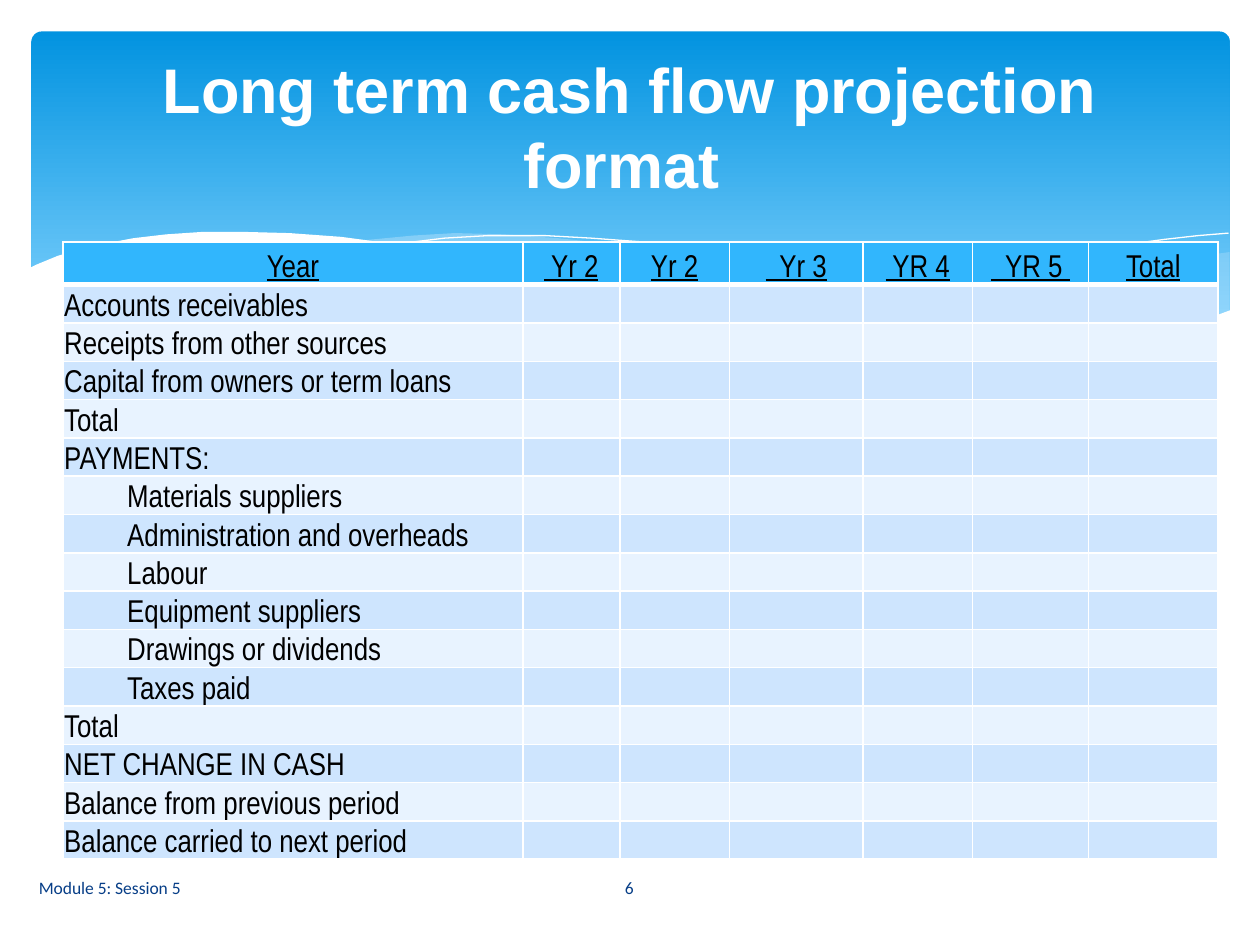
from lxml import etree
from pptx import Presentation
from pptx.dml.color import RGBColor
from pptx.enum.shapes import MSO_SHAPE
from pptx.enum.text import MSO_ANCHOR, PP_ALIGN
from pptx.oxml.ns import qn
from pptx.util import Inches, Pt

ROUNDED_RECTANGLE = MSO_SHAPE.ROUNDED_RECTANGLE
MIDDLE, BOTTOM = MSO_ANCHOR.MIDDLE, MSO_ANCHOR.BOTTOM
LEFT, CENTER = PP_ALIGN.LEFT, PP_ALIGN.CENTER

WHITE = RGBColor(0xFF, 0xFF, 0xFF)
BLACK = RGBColor(0x00, 0x00, 0x00)
NAVY = RGBColor(0x07, 0x3E, 0x87)
BANNER_TOP = RGBColor(0x02, 0x93, 0xE0)
BANNER_BOTTOM = RGBColor(0x83, 0xD3, 0xFE)
WAVE_BLUE = RGBColor(0xC6, 0xE7, 0xFC)
HEADER_BLUE = RGBColor(0x31, 0xB6, 0xFD)
BAND_DARK = RGBColor(0xCE, 0xE5, 0xFE)
BAND_LIGHT = RGBColor(0xE8, 0xF3, 0xFF)


def write_text(frame, text, size, font, color, align=LEFT, bold=False, underline=False):
    paragraph = frame.paragraphs[0]
    paragraph.alignment = align
    run = paragraph.add_run()
    run.text = text
    run.font.size = Pt(size)
    run.font.name = font
    run.font.color.rgb = color
    run.font.bold = bold
    run.font.underline = underline
    return paragraph


def add_wave(points, closed, color, opacity=100):
    corners = [(Inches(x), Inches(y)) for x, y in points]
    builder = slide.shapes.build_freeform(*corners[0])
    builder.add_line_segments(corners[1:], close=closed)
    shape = builder.convert_to_shape()
    shape.shadow.inherit = False
    if closed:
        shape.line.fill.background()
        shape.fill.solid()
        shape.fill.fore_color.rgb = color
        fill_color = shape.fill._xPr.find(qn("a:solidFill"))[0]
        etree.SubElement(fill_color, qn("a:alpha"), val=str(opacity * 1000))
    else:
        shape.fill.background()
        shape.line.color.rgb = color
        shape.line.width = Pt(0)


presentation = Presentation()
presentation.slide_width = Inches(10)
presentation.slide_height = Inches(7.5)
slide = presentation.slides.add_slide(presentation.slide_layouts[6])

banner = slide.shapes.add_shape(
    ROUNDED_RECTANGLE, Inches(0.25), Inches(0.25), Inches(9.51), Inches(2.7))
banner.adjustments[0] = 0.03
banner.shadow.inherit = False
banner.line.fill.background()
banner.fill.gradient()
banner.fill.gradient_angle = 270
for stop, color, position in zip(
        banner.fill.gradient_stops, (BANNER_TOP, BANNER_BOTTOM), (0, 0.9)):
    stop.color.rgb = color
    stop.position = position

right_wave = [
    (9.76, 2), (9.48, 2.04), (9.21, 2.1), (8.91, 2.16), (8.61, 2.23), (8.05, 2.37),
    (7.53, 2.48), (7.06, 2.57), (6.61, 2.65), (6.91, 2.69), (7.19, 2.72), (7.45, 2.75),
    (7.69, 2.77), (8.03, 2.78), (8.35, 2.77), (8.63, 2.75), (8.89, 2.72), (9.13, 2.67),
    (9.35, 2.62), (9.63, 2.52), (9.76, 2.47)]
middle_wave = [
    (8.93, 2.73), (8.66, 2.69), (8.07, 2.6), (7.41, 2.47), (6.68, 2.31), (6.29, 2.22),
    (5.98, 2.14), (5.69, 2.08), (5.41, 2.03), (5.14, 1.98), (4.89, 1.94), (4.42, 1.89),
    (3.99, 1.86), (3.61, 1.85), (3.28, 1.87), (2.86, 1.91), (3.23, 1.96), (3.62, 2.03),
    (4.04, 2.11), (4.49, 2.22), (5.3, 2.4), (6.01, 2.55), (6.65, 2.66), (7.22, 2.74),
    (7.61, 2.77), (8.07, 2.78), (8.48, 2.77), (8.76, 2.75)]
long_crest = [
    (3.09, 1.95), (3.28, 1.92), (3.53, 1.89), (3.87, 1.87), (4.33, 1.87), (4.69, 1.89),
    (5.1, 1.92), (5.56, 1.97), (6.08, 2.04), (6.65, 2.13), (7.27, 2.26), (7.95, 2.41),
    (8.69, 2.61), (9.07, 2.72)]
right_crest = [
    (6.13, 2.57), (6.53, 2.46), (6.95, 2.35), (7.48, 2.23), (8.06, 2.1), (8.66, 1.99),
    (8.95, 1.94), (9.24, 1.9), (9.51, 1.87), (9.75, 1.85)]
white_wave = [
    (9.77, 2.46), (9.5, 2.56), (9.2, 2.65), (8.87, 2.71), (8.5, 2.75), (8.09, 2.77),
    (7.61, 2.75), (7.08, 2.7), (6.48, 2.62), (5.79, 2.5), (5.29, 2.39), (4.75, 2.27),
    (4.18, 2.13), (3.65, 2.02), (3.16, 1.94), (2.71, 1.88), (2.3, 1.85), (1.93, 1.84),
    (1.61, 1.84), (1.32, 1.86), (1.06, 1.89), (0.85, 1.93), (0.67, 1.97), (0.46, 2.03),
    (0.29, 2.1), (0.23, 2.13), (0.23, 3.29), (9.77, 3.29)]
add_wave(right_wave, True, WAVE_BLUE, opacity=29)
add_wave(middle_wave, True, WAVE_BLUE, opacity=40)
add_wave(long_crest, False, WHITE)
add_wave(right_crest, False, WHITE)
add_wave(white_wave, True, WHITE)

headers = ["Year", " Yr 2", "Yr 2", "  Yr 3", " YR 4", "  YR 5 ", "Total"]
payments = ["Materials suppliers", "Administration and overheads", "Labour",
            "Equipment suppliers", "Drawings or dividends", "Taxes paid"]
labels = ["Accounts receivables", "Receipts from other sources",
          "Capital from owners or term loans", "Total", "PAYMENTS:", *payments,
          "Total", "NET CHANGE IN CASH", "Balance from previous period",
          "Balance carried to next period"]
rows = [headers] + [[label] + [""] * 6 for label in labels]
column_widths = [3.65, 0.77, 0.87, 1.06, 0.87, 0.92, 1.03]
header_height, table_height = 0.34, 4.9

table = slide.shapes.add_table(
    len(rows), len(headers), Inches(0.5), Inches(1.92),
    Inches(sum(column_widths)), Inches(table_height)).table
for column, width in zip(table.columns, column_widths):
    column.width = Inches(width)
for row in table.rows:
    row.height = Inches((table_height - header_height) / len(labels))
table.rows[0].height = Inches(header_height)

for row_index, row in enumerate(rows):
    is_header = row_index == 0
    for column_index, text in enumerate(row):
        cell = table.cell(row_index, column_index)
        cell.vertical_anchor = BOTTOM
        cell.margin_left = cell.margin_right = cell.margin_top = Inches(0.01)
        cell.margin_bottom = 0
        properties = cell._tc.get_or_add_tcPr()
        for side in ("lnL", "lnR", "lnT", "lnB"):
            thick = (row_index, side) in ((0, "lnB"), (1, "lnT"))
            border = etree.SubElement(
                properties, qn(f"a:{side}"), w=str(Pt(3 if thick else 1)))
            border_fill = etree.SubElement(border, qn("a:solidFill"))
            etree.SubElement(border_fill, qn("a:srgbClr"), val=str(WHITE))
        cell.fill.solid()
        cell.fill.fore_color.rgb = (
            HEADER_BLUE if is_header else BAND_DARK if row_index % 2 else BAND_LIGHT)
        if text:
            paragraph = write_text(
                cell.text_frame, text, size=18, font="Arial Narrow", color=BLACK,
                align=CENTER if is_header else LEFT, underline=is_header)
            if text in payments:
                paragraph.level = 1
                paragraph._p.get_or_add_pPr().set("marL", str(Inches(0.5)))
        else:
            empty_paragraph = cell.text_frame.paragraphs[0]._p
            etree.SubElement(empty_paragraph, qn("a:endParaRPr"), sz="1200")

title = slide.shapes.add_textbox(Inches(0.5), Inches(0.37), Inches(9), Inches(1.37))
title.text_frame.word_wrap = True
title.text_frame.vertical_anchor = MIDDLE
title.text_frame.margin_bottom = Inches(0.16)
title_paragraph = write_text(
    title.text_frame, "Long term cash flow projection format ", size=36,
    font="Arial", color=WHITE, align=CENTER, bold=True)
title_paragraph.line_spacing = Pt(43)

for text, left, width, align in (
        ("Module 5: Session 5", 0.21, 4.14, LEFT), ("6", 4.36, 1.27, CENTER)):
    footer = slide.shapes.add_textbox(
        Inches(left), Inches(6.84), Inches(width), Inches(0.4))
    footer.text_frame.word_wrap = True
    footer.text_frame.vertical_anchor = MIDDLE
    write_text(footer.text_frame, text, size=10, font="Calibri", color=NAVY, align=align)

presentation.save("out.pptx")
